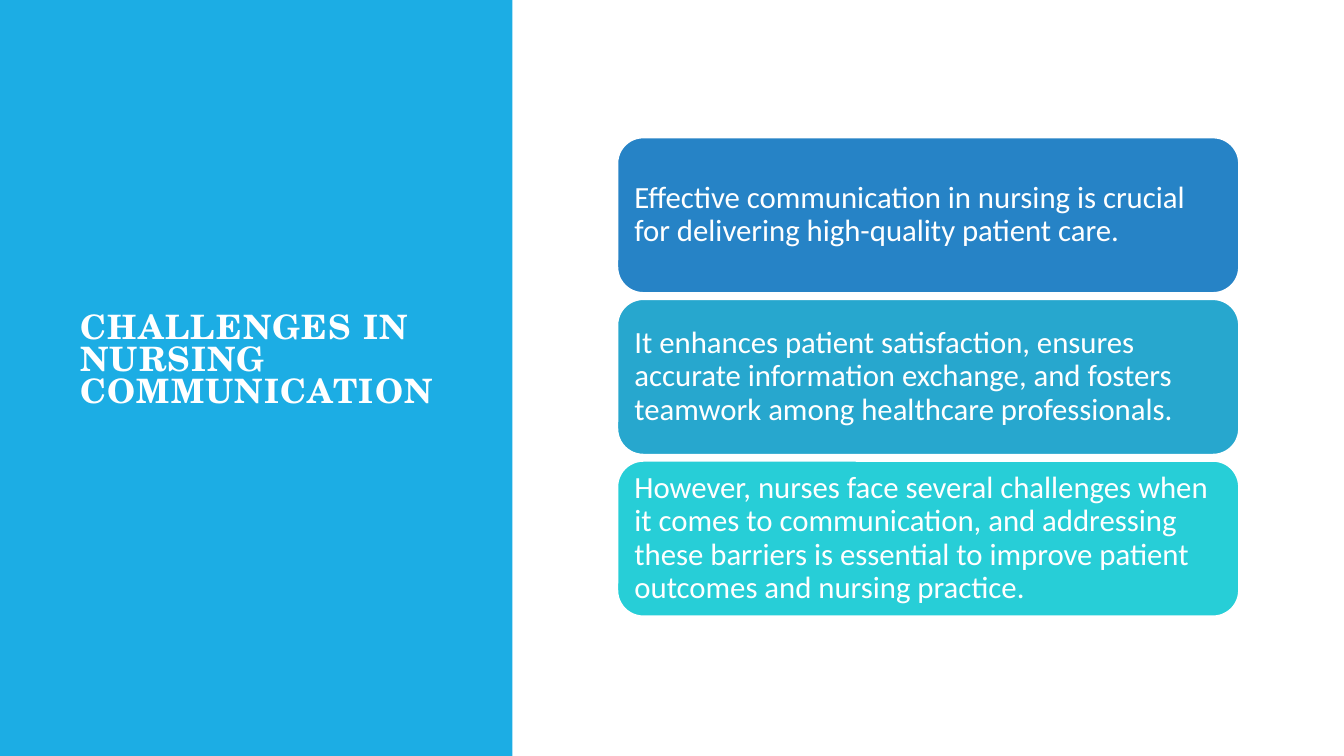
from dataclasses import dataclass

from pptx import Presentation
from pptx.dml.color import RGBColor
from pptx.enum.shapes import MSO_SHAPE as Shape
from pptx.enum.text import MSO_ANCHOR as Anchor, PP_ALIGN as Align
from pptx.util import Emu, Pt

PX = 9525
WHITE = "FFFFFF"
CARD_LEFT, CARD_TOP, CARD_WIDTH, CARD_HEIGHT = 588, 131, 592, 148
CARD_STEP = 154
CARD_INSET = 9


@dataclass(frozen=True)
class Card:
    text: str
    fill: str


CARDS = [
    Card("Effective communication in nursing is crucial for delivering "
         "high-quality patient care.", "2683C6"),
    Card("It enhances patient satisfaction, ensures accurate information exchange, "
         "and fosters teamwork among healthcare professionals.", "27A7CE"),
    Card("However, nurses face several challenges when it comes to communication, "
         "and addressing these barriers is essential to improve patient outcomes "
         "and nursing practice.", "27CED7"),
]


def px(length: int) -> Emu:
    return Emu(length * PX)


def color(value: str) -> RGBColor:
    return RGBColor.from_string(value)


def place(shape, left: int, top: int, width: int, height: int) -> None:
    shape.left, shape.top = px(left), px(top)
    shape.width, shape.height = px(width), px(height)


def add_box(page, kind: Shape, area: tuple[int, int, int, int], fill: str):
    box = page.shapes.add_shape(kind, *map(px, area))
    box.shadow.inherit = False
    box.fill.solid()
    box.fill.fore_color.rgb = color(fill)
    box.line.fill.background()
    return box


def write(shape, text: str, font: str, size: int, spacing: float):
    frame = shape.text_frame
    frame.word_wrap = True
    frame.vertical_anchor = Anchor.MIDDLE
    para = frame.paragraphs[0]
    para.alignment = Align.LEFT
    para.line_spacing = spacing
    span = para.add_run()
    span.text = text
    span.font.name = font
    span.font.size = Pt(size)
    span.font.color.rgb = color(WHITE)
    return span


def add_title(page) -> None:
    title = page.shapes.title
    place(title, 67, 67, 359, 585)
    span = write(title, "CHALLENGES IN NURSING COMMUNICATION", "TeX Gyre Schola", 24, 0.8)
    span.font.bold = True
    span.font._element.set("spc", "100")
    title.text_frame.margin_bottom = px(35)


def add_card(page, card: Card, row: int) -> None:
    area = (CARD_LEFT, CARD_TOP + row * CARD_STEP, CARD_WIDTH, CARD_HEIGHT)
    box = add_box(page, Shape.ROUNDED_RECTANGLE, area, card.fill)
    box.line.color.rgb = color(WHITE)
    box.line.width = Pt(1.25)
    frame = box.text_frame
    frame.margin_left = frame.margin_right = px(CARD_INSET)
    frame.margin_top = frame.margin_bottom = px(CARD_INSET)
    write(box, card.text, "Calibri", 22, 0.9)


def main() -> None:
    """Build the slide on challenges in nursing communication."""
    deck = Presentation()
    deck.slide_width, deck.slide_height = px(1280), px(720)
    page = deck.slides.add_slide(deck.slide_layouts[5])
    panel = add_box(page, Shape.RECTANGLE, (0, 0, 488, 720), "1CADE4")
    page.shapes.title._element.addprevious(panel._element)
    add_title(page)
    for row, card in enumerate(CARDS):
        add_card(page, card, row)
    deck.save("out.pptx")


if __name__ == "__main__":
    main()
